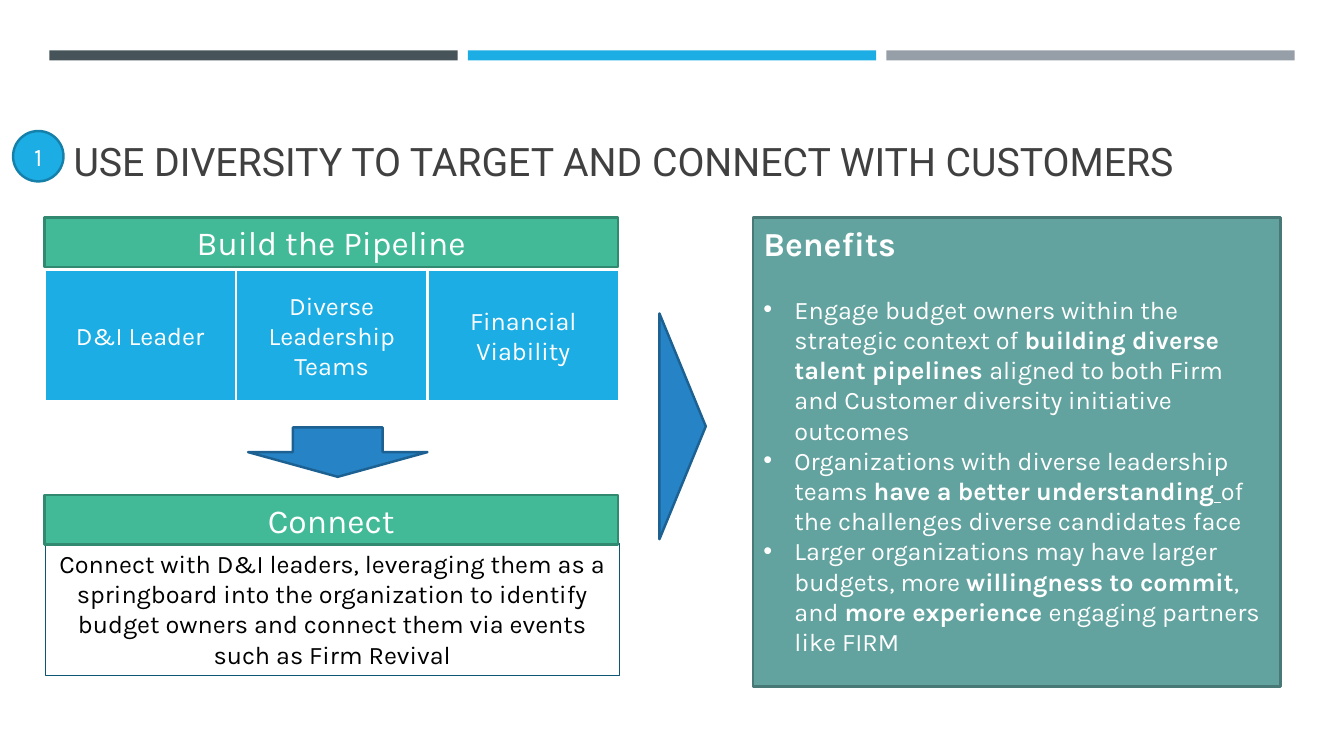
from dataclasses import dataclass

import lxml.etree
import pptx
import pptx.dml.color
import pptx.enum.shapes
import pptx.enum.text
import pptx.oxml.ns
import pptx.util

PX = 9144  # 100 px to the inch
KIND = pptx.enum.shapes.MSO_SHAPE
ALIGN = pptx.enum.text.PP_ALIGN
ANCHOR = pptx.enum.text.MSO_ANCHOR
WHITE = "FFFFFF"
BLUE = "1CADE4"
BOLD = {"bold": True}


@dataclass
class Box:
    at: tuple[int, int, int, int]
    fill: str | None = None
    line: str | None = None
    text: str = ""
    size: int = 18
    ink: str = WHITE
    width: float = 1.75
    kind: int = KIND.RECTANGLE
    anchor: int = ANCHOR.MIDDLE
    turn: int = 0


def color(code: str) -> pptx.dml.color.RGBColor:
    return pptx.dml.color.RGBColor.from_string(code)


def apply(item, style: dict) -> None:
    for name, value in style.items():
        setattr(item, name, value)


def place(shape, at: tuple[int, int, int, int]) -> None:
    names = ("left", "top", "width", "height")
    apply(shape, {name: px * PX for name, px in zip(names, at)})


def paint(shape, fill: str | None, line: str | None, width: float) -> None:
    for part, code in ((shape.fill, fill), (shape.line.fill, line)):
        if code:
            part.solid()
            part.fore_color.rgb = color(code)
        else:
            part.background()
    if line:
        shape.line.width = pptx.util.Pt(width)


def write(para, text: str, size: int, ink: str, face: str = "Karla",
          style: dict | None = None) -> None:
    run = para.add_run()
    run.text = text
    run.font.color.rgb = color(ink)
    apply(run.font, {"name": face, "size": pptx.util.Pt(size), **(style or {})})


def frame(shape, anchor: int):
    apply(shape.text_frame, {
        "word_wrap": True,
        "auto_size": pptx.enum.text.MSO_AUTO_SIZE.NONE,
        "vertical_anchor": anchor,
    })
    return shape.text_frame


def draw(slide, box: Box) -> None:
    shape = slide.shapes.add_shape(box.kind, 0, 0, PX, PX)
    place(shape, box.at)
    shape.rotation = box.turn
    shape.shadow.inherit = False
    paint(shape, box.fill, box.line, box.width)
    if box.text:
        para = frame(shape, box.anchor).paragraphs[0]
        para.alignment = ALIGN.CENTER
        write(para, box.text, box.size, box.ink)


def header(top: int, text: str) -> Box:
    return Box((44, top, 569, 49), "42BA97", "318A70", text, 24)


BARS = [Box((49 + 415 * i, 50, 405, 10), fill)
        for i, fill in enumerate(("465359", BLUE, "969FA7"))]
TILES = [Box((44 + 190 * i, 268, 190, 130), BLUE, WHITE, text)
         for i, text in enumerate(("D&I Leader", "Diverse Leadership Teams",
                                   "Financial Viability"))]
NOTE = ("Connect with D&I leaders, leveraging them as a springboard into the "
        "organization to identify budget owners and connect them via events "
        "such as Firm Revival")
BOXES = [
    *BARS,
    Box((13, 130, 50, 50), BLUE, "1580A9", "1",
        kind=KIND.FLOWCHART_CONNECTOR),
    *TILES,
    header(216, "Build the Pipeline"),
    Box((45, 539, 569, 131), None, "0E5772", NOTE, ink="000000", width=0.75,
        anchor=ANCHOR.TOP),
    header(491, "Connect"),
    Box((565, 400, 224, 46), "2683C6", "1C6192",
        kind=KIND.ISOSCELES_TRIANGLE, turn=90),
    Box((246, 424, 178, 49), "2683C6", "1C6192", kind=KIND.DOWN_ARROW),
]
GAINS = [
    [("Engage budget owners within the strategic context of ", {}),
     ("building diverse talent pipelines ", BOLD),
     ("aligned to both Firm and Customer diversity initiative outcomes", {})],
    [("Organizations with diverse leadership teams ", {}),
     ("have a better understanding", BOLD),
     (" ", {"bold": True, "underline": True}),
     ("of the challenges diverse candidates face", {})],
    [("Larger organizations may have larger budgets, more ", {}),
     ("willingness to commit", BOLD),
     (", and ", {}),
     ("more experience ", BOLD),
     ("engaging partners like FIRM", {})],
]


def bullet(para, mark: str | None) -> None:
    props = para._p.get_or_add_pPr()
    inset = 31 * PX if mark else 0
    props.set("marL", str(inset))
    props.set("indent", str(-inset))
    tag = pptx.oxml.ns.qn("a:buChar" if mark else "a:buNone")
    node = lxml.etree.SubElement(props, tag)
    if mark:
        node.set("char", mark)


def benefits(body) -> None:
    place(body, (747, 216, 523, 465))
    paint(body, "62A39F", "497976", 1.75)
    text = frame(body, ANCHOR.TOP)
    head = text.paragraphs[0]
    apply(head, {"space_before": pptx.util.Pt(0),
                 "space_after": pptx.util.Pt(22)})
    bullet(head, None)
    write(head, "Benefits", 24, WHITE, style=BOLD)
    for gain in GAINS:
        para = text.add_paragraph()
        para.space_before = pptx.util.Pt(0)
        bullet(para, "•")
        for part, style in gain:
            write(para, part, 18, WHITE, style=style)


def main() -> None:
    deck = pptx.Presentation()
    apply(deck, {"slide_width": 1333 * PX, "slide_height": 750 * PX})
    slide = deck.slides.add_slide(deck.slide_layouts[1])

    # Title
    title = slide.shapes.title
    place(title, (63, 80, 1206, 108))
    para = frame(title, ANCHOR.BOTTOM).paragraphs[0]
    para.alignment = ALIGN.LEFT
    write(para, "USE DIVERSITY TO TARGET AND CONNECT WITH CUSTOMERS",
          28, "404040", "Roboto")

    # Benefits panel, then bars, pipeline and arrows
    benefits(slide.placeholders[1])
    for box in BOXES:
        draw(slide, box)
    deck.save("out.pptx")


if __name__ == "__main__":
    main()
